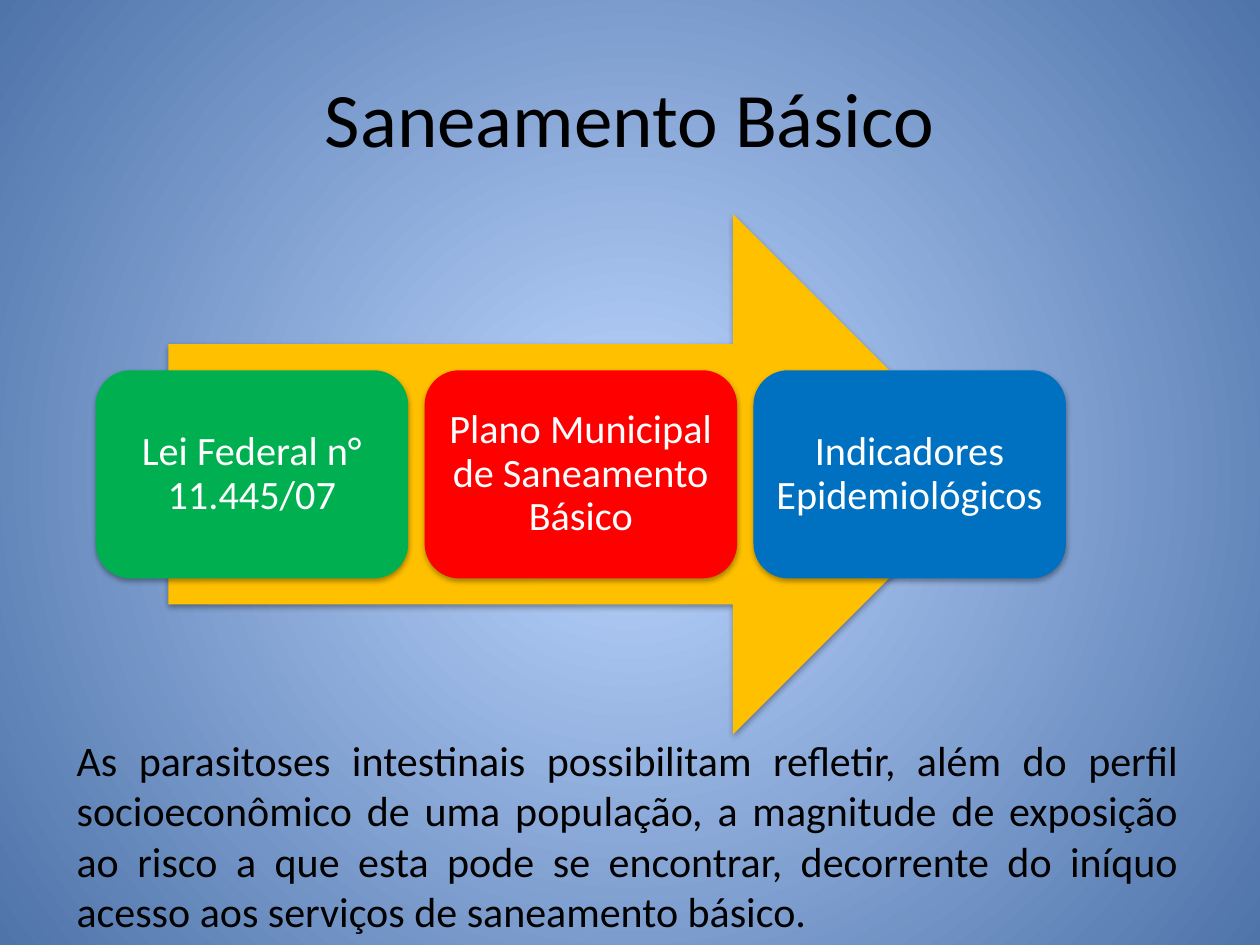
from lxml.etree import SubElement
from pptx import Presentation
from pptx.dml.color import RGBColor
from pptx.enum.shapes import MSO_SHAPE as Shape
from pptx.enum.text import MSO_ANCHOR as Anchor, PP_ALIGN as Align
from pptx.oxml.ns import qn
from pptx.util import Inches, Pt

COLORS = {
    "center": "BCD6FF", "edge": "4F74AA", "arrow": "FFC000", "law": "00B050",
    "plan": "FF0000", "indicators": "0070C0", "dark": "000000", "light": "FFFFFF",
}
STEPS = [
    ("Lei Federal n° 11.445/07", "law"),
    ("Plano Municipal de Saneamento Básico", "plan"),
    ("Indicadores Epidemiológicos", "indicators"),
]
CONCLUSION = (
    "As parasitoses intestinais possibilitam refletir, além do perfil "
    "socioeconômico de uma população, a magnitude de exposição ao risco a que "
    "esta pode se encontrar, decorrente do iníquo acesso aos serviços de "
    "saneamento básico."
)


def rgb(name):
    return RGBColor.from_string(COLORS[name])


def paint_background(slide):
    """Radial gradient, light in the middle of the slide."""
    fill = slide.background.fill
    fill.gradient()
    for stop, name, position in zip(fill.gradient_stops, ("center", "edge"), (0, 1)):
        stop.color.rgb = rgb(name)
        stop.position = position
    gradient = next(slide._element.iter(qn("a:gradFill")))
    gradient.remove(gradient.find(qn("a:lin")))
    radial = SubElement(gradient, qn("a:path"), path="circle")
    SubElement(radial, qn("a:fillToRect"), l="50000", t="50000", r="50000", b="50000")


def write(frame, text, size, color, align, anchor):
    frame.word_wrap = True
    frame.vertical_anchor = anchor
    paragraph = frame.paragraphs[0]
    paragraph.text = text
    paragraph.alignment = align
    font = paragraph.font
    font.name, font.size, font.color.rgb = "Calibri", Pt(size), rgb(color)
    return paragraph


def add_text(slide, box, text, size, align, anchor):
    frame = slide.shapes.add_textbox(*map(Inches, box)).text_frame
    write(frame, text, size, "dark", align, anchor)


def add_shadowed(shapes, kind, box, color):
    shape = shapes.add_shape(kind, *map(Inches, box))
    shape.fill.solid()
    shape.fill.fore_color.rgb = rgb(color)
    shape.line.fill.background()
    shape.shadow.inherit = False
    effects = shape._element.spPr.find(qn("a:effectLst"))
    shadow = SubElement(effects, qn("a:outerShdw"), blurRad=str(Pt(3.1)),
                        dist=str(Pt(1.8)), dir="5400000", rotWithShape="0")
    black = SubElement(shadow, qn("a:srgbClr"), val=COLORS["dark"])
    SubElement(black, qn("a:alpha"), val="35000")
    return shape


def add_process(slide, box):
    """Arrow across the box, with one step card after another on its middle."""
    left, top, width, height = box
    shapes = slide.shapes.add_group_shape().shapes
    arrow_width = 0.85 * width
    add_shadowed(shapes, Shape.RIGHT_ARROW,
                 (left + (width - arrow_width) / 2, top, arrow_width, height), "arrow")

    card_width, card_height = 2.48, 0.4 * height
    pitch = (width - card_width) / (len(STEPS) - 1)
    card_top = top + (height - card_height) / 2
    for index, (label, color) in enumerate(STEPS):
        card = add_shadowed(shapes, Shape.ROUNDED_RECTANGLE,
                            (left + index * pitch, card_top, card_width, card_height),
                            color)
        frame = card.text_frame
        frame.margin_left = frame.margin_right = Inches(0.1)
        frame.margin_top = frame.margin_bottom = Inches(0.1)
        paragraph = write(frame, label, 23, "light", Align.CENTER, Anchor.MIDDLE)
        paragraph.line_spacing = 0.9


def main():
    deck = Presentation()
    deck.slide_width, deck.slide_height = Inches(10), Inches(7.5)
    slide = deck.slides.add_slide(deck.slide_layouts[6])
    paint_background(slide)
    add_text(slide, (0.5, 0.3, 9, 1.25), "Saneamento Básico", 44,
             Align.CENTER, Anchor.MIDDLE)
    add_process(slide, (0.76, 1.7, 7.7, 4.13))
    add_text(slide, (0.51, 5.78, 8.94, 1.72), CONCLUSION, 24,
             Align.JUSTIFY, Anchor.TOP)
    deck.save("out.pptx")


if __name__ == "__main__":
    main()
